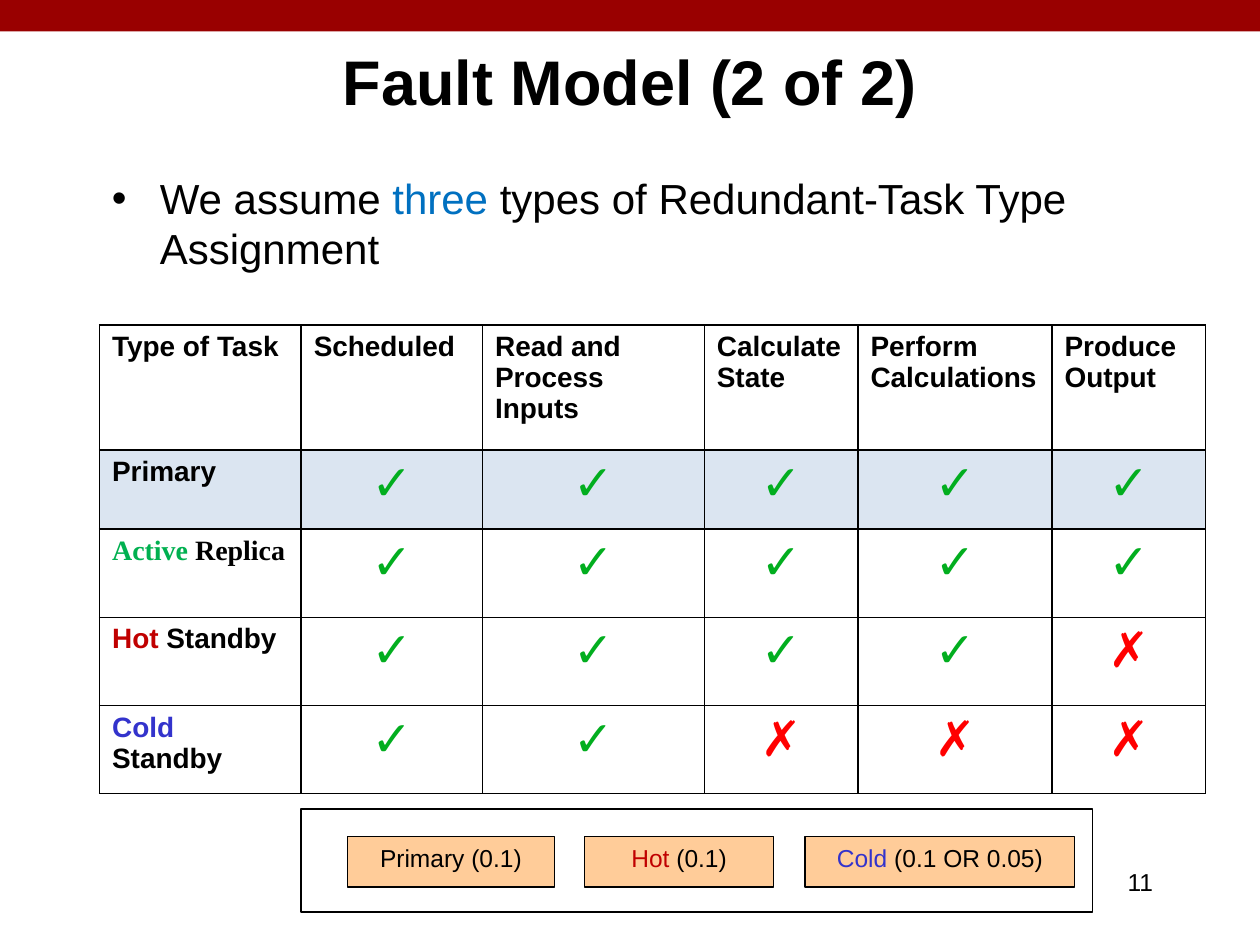
import pptx
import pptx.util
import pptx.dml.color
import pptx.enum.shapes
import pptx.enum.text
import pptx.oxml
import pptx.oxml.ns
import lxml.etree

Inches = pptx.util.Inches
Pt = pptx.util.Pt
Align = pptx.enum.text.PP_ALIGN
Anchor = pptx.enum.text.MSO_ANCHOR
Rect = pptx.enum.shapes.MSO_SHAPE.RECTANGLE
qn = pptx.oxml.ns.qn

BLACK, RED, BLUE = "000000", "C00000", "3333CC"
GREEN, CROSS = "02AE1F", "FF0000"

HEADS = ["Type of Task", "Scheduled", "Read and Process Inputs",
         "Calculate State", "Perform Calculations", "Produce Output"]
TASKS = [
    ([("Primary", BLACK)], "Arial", "✓✓✓✓✓"),
    ([("Active", "00B050"), (" Replica", BLACK)], "Times New Roman", "✓✓✓✓✓"),
    ([("Hot", RED), (" Standby", BLACK)], "Arial", "✓✓✓✓✗"),
    ([("Cold", BLUE), (" Standby", BLACK)], "Arial", "✓✓✗✗✗"),
]
WIDTHS = [1.6, 1.44, 1.76, 1.22, 1.54, 1.22]
HEIGHTS = [0.99, 0.63, 0.7, 0.7, 0.7]
COSTS = [
    (0.37, 1.64, [("Primary (0.1)", BLACK)]),
    (2.25, 1.5, [("Hot", RED), (" (0.1)", BLACK)]),
    (4, 2.14, [("Cold", BLUE), (" (0.1 OR 0.05)", BLACK)]),
]


def color(code):
    """Turn a hex string into a color."""
    return pptx.dml.color.RGBColor.from_string(code)


def write(frame, parts, size, align=Align.LEFT, bold=False, face="Arial"):
    """Write colored parts into the first paragraph of a frame."""
    para = frame.paragraphs[0]
    para.alignment = align
    for text, code in parts:
        run = para.add_run()
        run.text = text
        run.font.size = Pt(size)
        run.font.name = face
        run.font.bold = bold
        run.font.color.rgb = color(code)
    return para


def label(slide, left, top, width, height):
    """Add a wrapping text box and return its frame."""
    box = slide.shapes.add_textbox(
        Inches(left), Inches(top), Inches(width), Inches(height))
    box.text_frame.word_wrap = True
    return box.text_frame


def block(slide, left, top, width, height, fill=None, line=None):
    """Add a plain rectangle with an optional fill and black line."""
    shape = slide.shapes.add_shape(
        Rect, Inches(left), Inches(top), Inches(width), Inches(height))
    shape.shadow.inherit = False
    if fill:
        shape.fill.solid()
        shape.fill.fore_color.rgb = color(fill)
    else:
        shape.fill.background()
    if line:
        shape.line.color.rgb = color(BLACK)
        shape.line.width = Pt(line)
    else:
        shape.line.fill.background()
    return shape


def title(slide, left, top, width, height):
    """Place the slide title."""
    frame = label(slide, left, top, width, height)
    frame.vertical_anchor = Anchor.MIDDLE
    write(frame, [("Fault Model (2 of 2)", BLACK)], 36, Align.CENTER, True)


def body(slide, left, top, width, height):
    """Place the bulleted statement."""
    frame = label(slide, left, top, width, height)
    para = write(frame, [("We assume ", BLACK), ("three", "0070C0"),
                         (" types of Redundant-Task Type Assignment", BLACK)], 24)
    props = para._p.get_or_add_pPr()
    props.set("marL", str(Inches(0.38)))
    props.set("indent", str(-Inches(0.38)))
    lxml.etree.SubElement(props, qn("a:buFont")).set("typeface", "Arial")
    lxml.etree.SubElement(props, qn("a:buChar")).set("char", "•")


def border(cell):
    """Draw a thin black line on each side of a cell."""
    props = cell._tc.get_or_add_tcPr()
    for side in ("a:lnL", "a:lnR", "a:lnT", "a:lnB"):
        line = lxml.etree.SubElement(props, qn(side))
        line.set("w", str(Pt(1)))
        fill = lxml.etree.SubElement(line, qn("a:solidFill"))
        lxml.etree.SubElement(fill, qn("a:srgbClr")).set("val", BLACK)


def tint(cell):
    """Fill a cell with a see-through blue."""
    cell.fill.solid()
    cell.fill.fore_color.rgb = color("4F81BD")
    shade = cell._tc.tcPr.find(qn("a:solidFill")).find(qn("a:srgbClr"))
    lxml.etree.SubElement(shade, qn("a:alpha")).set("val", "20000")


def grid(slide, left, top):
    """Place the table of task types."""
    table = slide.shapes.add_table(
        len(HEIGHTS), len(WIDTHS), Inches(left), Inches(top),
        Inches(sum(WIDTHS)), Inches(sum(HEIGHTS))).table
    table.first_row = table.horz_banding = False
    for col, width in zip(table.columns, WIDTHS):
        col.width = Inches(width)
    for row, height in zip(table.rows, HEIGHTS):
        row.height = Inches(height)
    for cell in table.iter_cells():
        border(cell)
        cell.fill.background()
    for col, head in enumerate(HEADS):
        write(table.cell(0, col).text_frame, [(head, BLACK)], 16, bold=True)
    for row, (name, face, marks) in enumerate(TASKS, 1):
        write(table.cell(row, 0).text_frame, name, 16, bold=True, face=face)
        for col, mark in enumerate(marks, 1):
            code = GREEN if mark == "✓" else CROSS
            write(table.cell(row, col).text_frame, [(mark, code)], 28, Align.CENTER)
    for cell in table.rows[1].cells:
        tint(cell)


def legend(slide, left, top, width, height):
    """Place the framed row of task costs."""
    for shift, wide, parts in COSTS:
        shape = block(slide, left + shift, top + 0.22, wide, 0.4, "FFCC99", 0.75)
        shape.text_frame.vertical_anchor = Anchor.TOP
        write(shape.text_frame, parts, 14, Align.CENTER)
    block(slide, left, top, width, height, line=1)


def number(slide, left, top, width, height):
    """Place the slide number."""
    write(label(slide, left, top, width, height), [("11", BLACK)], 14, Align.RIGHT)


def main():
    """Build and save the slide."""
    deck = pptx.Presentation()
    deck.slide_width, deck.slide_height = Inches(10), Inches(7.5)
    slide = deck.slides.add_slide(deck.slide_layouts[6])
    block(slide, 0, 0, 10, 0.25, "990000")
    body(slide, 0.79, 1.32, 8.33, 1.83)
    title(slide, 0, 0.01, 10, 1.25)
    grid(slide, 0.79, 2.58)
    number(slide, 7.17, 6.83, 2.08, 0.5)
    legend(slide, 2.39, 6.42, 6.28, 0.82)
    deck.save("out.pptx")


if __name__ == "__main__":
    main()
